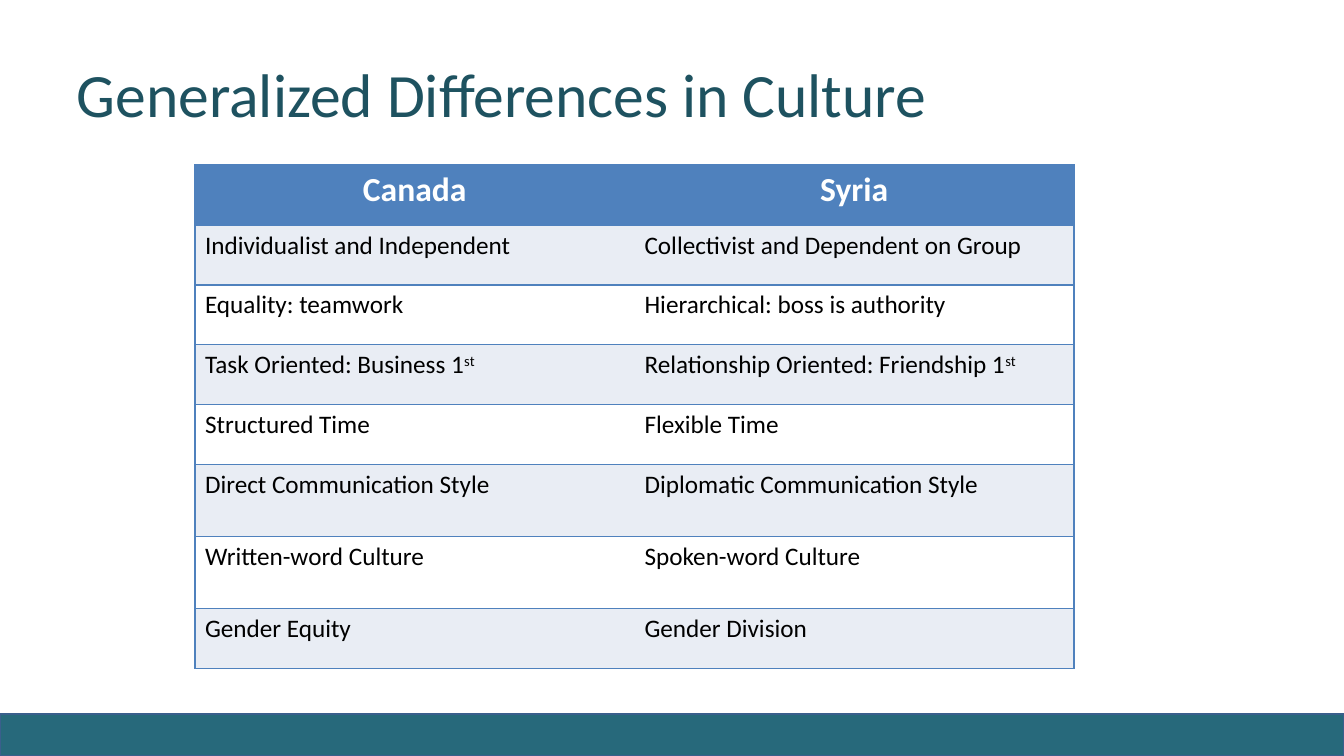
from lxml.etree import SubElement
from pptx import Presentation
from pptx.dml.color import RGBColor
from pptx.enum.shapes import MSO_SHAPE
from pptx.enum.text import MSO_ANCHOR, PP_ALIGN
from pptx.oxml.ns import qn
from pptx.util import Emu, Pt

PX = 914400 / 100.8
BLUE = "4F81BD"
NO_STYLE_NO_GRID = "{2D5ABB26-0587-4C30-8999-92F81FD0307C}"


def box(*lengths):
    """Turn pixel lengths into EMU."""
    return [Emu(round(length * PX)) for length in lengths]


def color(value):
    return RGBColor.from_string(value)


presentation = Presentation()
presentation.slide_width, presentation.slide_height = box(1344, 756)
slide = presentation.slides.add_slide(presentation.slide_layouts[6])

# Title
title = slide.shapes.add_textbox(*box(67, 30, 1210, 126))
title.text_frame.word_wrap = True
title.text_frame.vertical_anchor = MSO_ANCHOR.MIDDLE
title.text_frame.text = "Generalized Differences in Culture"
title_font = title.text_frame.paragraphs[0].runs[0].font
title_font.name = "Calibri"
title_font.size = Pt(44)
title_font.color.rgb = color("1E5260")

# Footer band
band = slide.shapes.add_shape(MSO_SHAPE.RECTANGLE, *box(0, 714, 1344, 42))
band.shadow.inherit = False
band.fill.solid()
band.fill.fore_color.rgb = color("27697B")
band.line.color.rgb = color("3A5F8C")
band.line.width = Pt(2)

# Comparison table; text after ^ is superscript
comparisons = [
    ("Canada", "Syria"),
    ("Individualist and Independent", "Collectivist and Dependent on Group"),
    ("Equality: teamwork", "Hierarchical: boss is authority"),
    ("Task Oriented: Business 1^st", "Relationship Oriented: Friendship 1^st"),
    ("Structured Time", "Flexible Time"),
    ("Direct Communication Style", "Diplomatic Communication Style"),
    ("Written-word Culture", "Spoken-word Culture"),
    ("Gender Equity", "Gender Division"),
]
row_heights = box(60, 60, 60, 60, 60, 72, 72, 60)
frame = slide.shapes.add_table(len(comparisons), 2, *box(195, 165, 879, 504))
table = frame.table
table.first_row = False
table.horz_banding = False
table._tbl.tblPr.find(qn("a:tableStyleId")).text = NO_STYLE_NO_GRID

for row_index, (texts, height) in enumerate(zip(comparisons, row_heights)):
    is_header = row_index == 0
    table.rows[row_index].height = height
    for column_index, text in enumerate(texts):
        cell = table.cell(row_index, column_index)
        outer_side = ("a:lnL", "a:lnR")[column_index]
        for side in (outer_side, "a:lnT", "a:lnB"):
            border = SubElement(cell._tc.get_or_add_tcPr(), qn(side), w=str(Pt(1)))
            border_fill = SubElement(border, qn("a:solidFill"))
            SubElement(border_fill, qn("a:srgbClr"), val=BLUE)
        cell.fill.solid()
        band_color = "E9EDF4" if row_index % 2 else "FFFFFF"
        cell.fill.fore_color.rgb = color(BLUE if is_header else band_color)

        main_text, _, superscript = text.partition("^")
        paragraph = cell.text_frame.paragraphs[0]
        paragraph.text = main_text
        paragraph.alignment = PP_ALIGN.CENTER if is_header else PP_ALIGN.LEFT
        if superscript:
            run = paragraph.add_run()
            run.text = superscript
            run._r.get_or_add_rPr().set("baseline", "30000")
        for run in paragraph.runs:
            run.font.name = "Calibri"
            run.font.size = Pt(24 if is_header else 18)
            run.font.bold = is_header
            run.font.color.rgb = color("FFFFFF" if is_header else "000000")

presentation.save("out.pptx")
